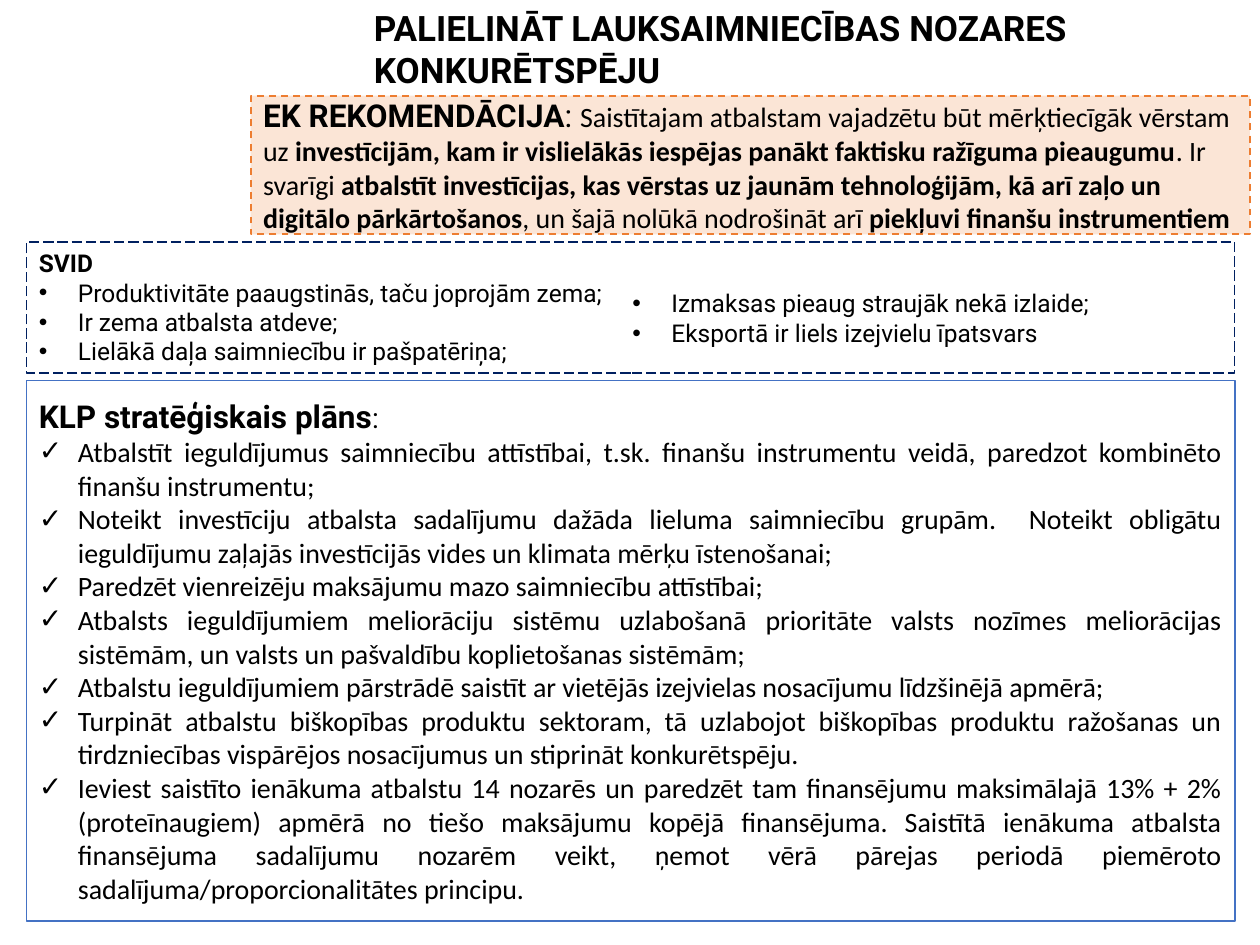
from lxml.etree import SubElement
from pptx import Presentation
from pptx.dml.color import RGBColor as Color
from pptx.enum.dml import MSO_LINE_DASH_STYLE as Dash
from pptx.enum.shapes import MSO_AUTO_SHAPE_TYPE as Shape
from pptx.enum.text import MSO_ANCHOR as Anchor, MSO_AUTO_SIZE as Fit, PP_ALIGN as Align
from pptx.oxml.ns import qn
from pptx.util import Inches, Pt

colours = {
    "text": "000000",
    "peach": "FBE5D6",
    "orange": "ED7D31",
    "navy": "002060",
    "blue": "4472C4",
    "white": "FFFFFF",
}
formats = {
    "title": {"name": "Roboto", "size": Pt(20), "bold": True},
    "heading": {"name": "Roboto", "size": Pt(18), "bold": True},
    "heading mark": {"name": "Roboto", "size": Pt(18), "bold": False},
    "plan mark": {"name": "Roboto", "size": Pt(16), "bold": False},
    "label": {"name": "Roboto", "size": Pt(14), "bold": True},
    "note": {"name": "Roboto", "size": Pt(14), "bold": False},
    "body": {"name": "Calibri", "size": Pt(16), "bold": False},
    "strong": {"name": "Calibri", "size": Pt(16), "bold": True},
}

deck = Presentation()
deck.slide_width, deck.slide_height = Inches(10), Inches(7.5)
column, row = deck.slide_width / 100, deck.slide_height / 100
page = deck.slides.add_slide(deck.slide_layouts[6])


def add_panel(left, top, width, height, fill=None, line=None, weight=1, dash=None,
              anchor=Anchor.TOP, fit=Fit.NONE):
    place = [round(left * column), round(top * row), round(width * column), round(height * row)]
    if line:
        box = page.shapes.add_shape(Shape.RECTANGLE, *place)
        box.shadow.inherit = False
        box.line.color.rgb = Color.from_string(colours[line])
        box.line.width = Pt(weight)
        if dash:
            box.line.dash_style = dash
        if fill:
            box.fill.solid()
            box.fill.fore_color.rgb = Color.from_string(colours[fill])
        else:
            box.fill.background()
    else:
        box = page.shapes.add_textbox(*place)
    frame = box.text_frame
    for key, value in {"word_wrap": True, "auto_size": fit, "vertical_anchor": anchor}.items():
        setattr(frame, key, value)
    return frame


def write(frame, spans, align=Align.LEFT, bullet=None):
    para = frame.paragraphs[0] if not frame.paragraphs[0].runs else frame.add_paragraph()
    para.alignment = align
    if bullet:
        properties = para._p.get_or_add_pPr()
        properties.set("marL", str(Inches(0.31)))
        properties.set("indent", str(-Inches(0.31)))
        SubElement(properties, qn("a:buFont")).set("typeface", "Arial")
        SubElement(properties, qn("a:buChar")).set("char", bullet)
    for text, style in spans:
        span = para.add_run()
        span.text = text
        for key, value in formats[style].items():
            setattr(span.font, key, value)
        span.font.color.rgb = Color.from_string(colours["text"])
    return para


title = add_panel(28.7, 0, 70.6, 10.27, fit=Fit.SHAPE_TO_FIT_TEXT)
write(title, [("PALIELINĀT LAUKSAIMNIECĪBAS NOZARES KONKURĒTSPĒJU", "title")])

recommendation = add_panel(19.9, 10.13, 79.3, 14.67, "peach", "orange", 1, Dash.DASH, Anchor.MIDDLE)
write(recommendation, [
    ("EK REKOMENDĀCIJA", "heading"),
    (": ", "heading mark"),
    ("Saistītajam atbalstam vajadzētu būt mērķtiecīgāk vērstam uz ", "body"),
    ("investīcijām, kam ir vislielākās iespējas panākt faktisku ražīguma pieaugumu", "strong"),
    (". Ir svarīgi ", "body"),
    ("atbalstīt investīcijas, kas vērstas uz jaunām tehnoloģijām, kā arī zaļo un "
     "digitālo pārkārtošanos", "strong"),
    (", un šajā nolūkā nodrošināt arī ", "body"),
    ("piekļuvi finanšu instrumentiem", "strong"),
])

analysis = add_panel(2.1, 25.6, 95.9, 13.87, None, "navy", 0.75, Dash.LONG_DASH,
                     fit=Fit.SHAPE_TO_FIT_TEXT)
write(analysis, [("SVID", "label")], Align.JUSTIFY)
for text in [
    "Produktivitāte paaugstinās, taču joprojām zema;",
    "Ir zema atbalsta atdeve;",
    "Lielākā daļa saimniecību ir pašpatēriņa;",
]:
    write(analysis, [(text, "note")], Align.JUSTIFY, "•")

plan = add_panel(2.1, 40.27, 95.9, 57.2, "white", "blue", anchor=Anchor.MIDDLE)
write(plan, [("KLP stratēģiskais plāns", "heading"), (":", "plan mark")], Align.JUSTIFY)
for text in [
    "Atbalstīt ieguldījumus saimniecību attīstībai, t.sk. finanšu instrumentu veidā, "
    "paredzot kombinēto finanšu instrumentu;",
    "Noteikt investīciju atbalsta sadalījumu dažāda lieluma saimniecību grupām.  "
    "Noteikt obligātu ieguldījumu zaļajās investīcijās vides un klimata mērķu īstenošanai;",
    "Paredzēt vienreizēju maksājumu mazo saimniecību attīstībai;",
    "Atbalsts ieguldījumiem meliorāciju sistēmu uzlabošanā prioritāte valsts nozīmes "
    "meliorācijas sistēmām, un valsts un pašvaldību koplietošanas sistēmām;",
    "Atbalstu ieguldījumiem pārstrādē saistīt ar vietējās izejvielas nosacījumu "
    "līdzšinējā apmērā;",
    "Turpināt atbalstu biškopības produktu sektoram, tā uzlabojot biškopības produktu "
    "ražošanas un tirdzniecības vispārējos nosacījumus un stiprināt konkurētspēju.",
    "Ieviest saistīto ienākuma atbalstu 14 nozarēs un paredzēt tam finansējumu "
    "maksimālajā 13% + 2% (proteīnaugiem) apmērā no tiešo maksājumu kopējā finansējuma. "
    "Saistītā ienākuma atbalsta finansējuma sadalījumu nozarēm veikt, ņemot vērā pārejas "
    "periodā piemēroto sadalījuma/proporcionalitātes principu.",
]:
    last = write(plan, [(text, "body")], Align.JUSTIFY, "✓")
last.space_after = Pt(6)

trends = add_panel(49.2, 29.87, 45.9, 7.6, fit=Fit.SHAPE_TO_FIT_TEXT)
for text in ["Izmaksas pieaug straujāk nekā izlaide;", "Eksportā ir liels izejvielu īpatsvars"]:
    write(trends, [(text, "note")], Align.JUSTIFY, "•")

deck.save("out.pptx")
